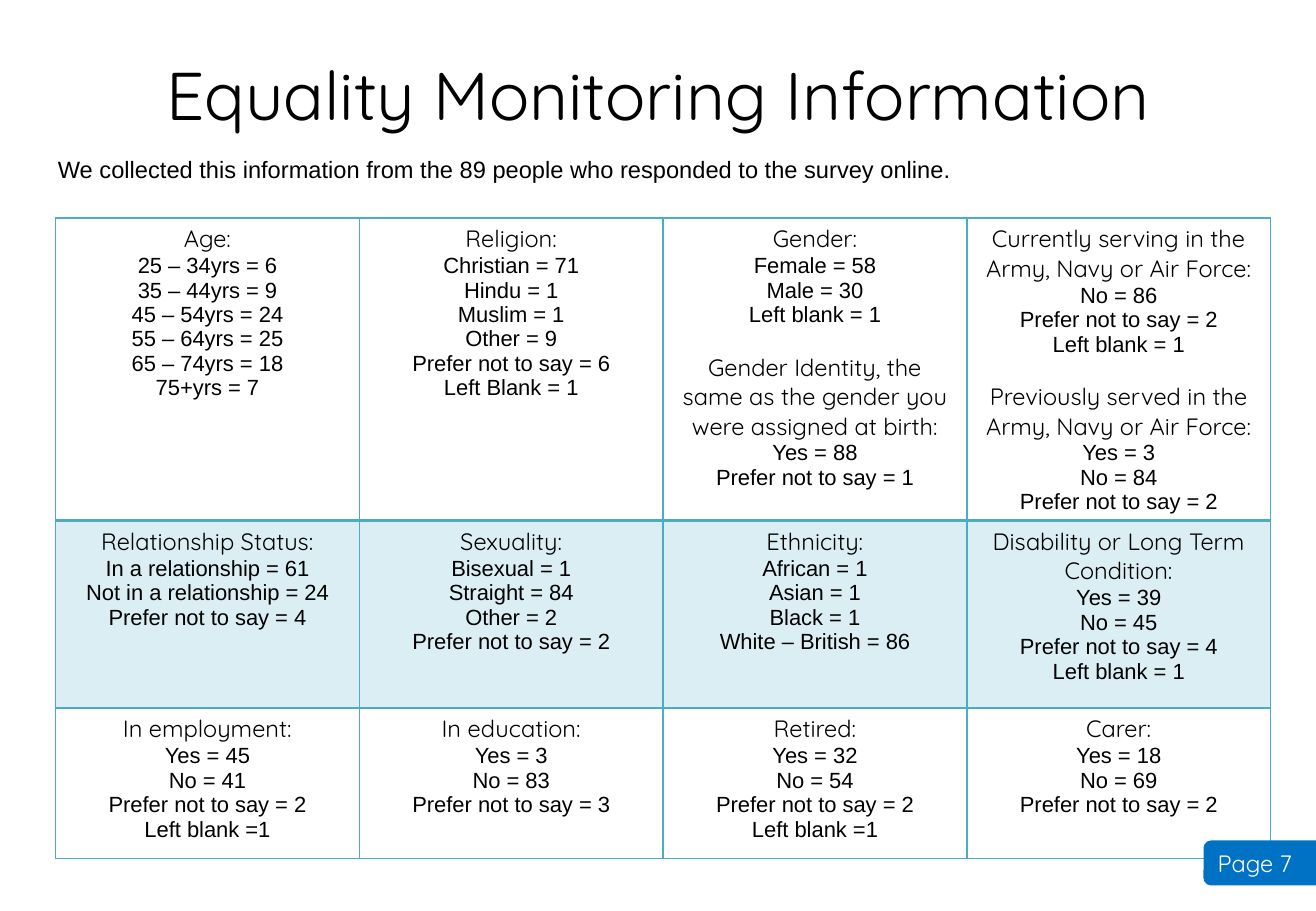
from dataclasses import dataclass

from lxml.etree import SubElement
from pptx import Presentation
from pptx.dml.color import RGBColor
from pptx.enum.shapes import MSO_SHAPE
from pptx.enum.text import MSO_ANCHOR, MSO_AUTO_SIZE, PP_ALIGN
from pptx.oxml.ns import qn
from pptx.util import Cm, Pt

TEAL = "4BACC6"
PALE_TEAL = "DBEEF4"
BLUE = "0072C6"
WHITE = "FFFFFF"
BLACK = "000000"

HEADING = {"name": "Quicksand", "size": Pt(14)}
ANSWER = {"name": "Arial", "size": Pt(13)}
INTRO = {"name": "Arial", "size": Pt(14)}
TITLE = {"name": "Quicksand", "size": Pt(40)}


@dataclass(frozen=True)
class Question:
    heading: str
    answers: tuple[str, ...]


@dataclass(frozen=True)
class Row:
    height: float
    fill: str
    top: float
    bottom: float
    cells: tuple[tuple[Question, ...], ...]


ROWS = (
    Row(6.31, WHITE, 1, 2, (
        (Question("Age:", (
            "25 – 34yrs = 6", "35 – 44yrs = 9", "45 – 54yrs = 24",
            "55 – 64yrs = 25", "65 – 74yrs = 18", "75+yrs = 7")),),
        (Question("Religion:", (
            "Christian = 71", "Hindu = 1", "Muslim = 1", "Other = 9",
            "Prefer not to say = 6", "Left Blank = 1")),),
        (Question("Gender:", ("Female = 58", "Male = 30", "Left blank = 1")),
         Question("Gender Identity, the same as the gender you were assigned at birth:",
                  ("Yes = 88", "Prefer not to say = 1"))),
        (Question("Currently serving in the Army, Navy or Air Force:",
                  ("No = 86", "Prefer not to say = 2", "Left blank = 1")),
         Question("Previously served in the Army, Navy or Air Force:",
                  ("Yes = 3", "No = 84", "Prefer not to say = 2"))),
    )),
    Row(3.92, PALE_TEAL, 2, 1, (
        (Question("Relationship Status:", (
            "In a relationship = 61", "Not in a relationship = 24",
            "Prefer not to say = 4")),),
        (Question("Sexuality:", (
            "Bisexual = 1", "Straight = 84", "Other = 2", "Prefer not to say = 2")),),
        (Question("Ethnicity:", (
            "African = 1", "Asian = 1", "Black = 1", "White – British = 86")),),
        (Question("Disability or Long Term Condition:", (
            "Yes = 39", "No = 45", "Prefer not to say = 4", "Left blank = 1")),),
    )),
    Row(3.15, WHITE, 1, 1, (
        (Question("In employment:", (
            "Yes = 45", "No = 41", "Prefer not to say = 2", "Left blank =1")),),
        (Question("In education:", ("Yes = 3", "No = 83", "Prefer not to say = 3")),),
        (Question("Retired:", (
            "Yes = 32", "No = 54", "Prefer not to say = 2", "Left blank =1")),),
        (Question("Carer:", ("Yes = 18", "No = 69", "Prefer not to say = 2")),),
    )),
)


def rgb(color: str) -> RGBColor:
    return RGBColor.from_string(color)


def write(p, text: str, fmt: dict, color: str = BLACK, align=PP_ALIGN.LEFT) -> None:
    p.alignment = align
    r = p.add_run()
    r.text = text
    for key, value in fmt.items():
        setattr(r.font, key, value)
    r.font.color.rgb = rgb(color)


def set_borders(cell, top: float, bottom: float) -> None:
    tc_pr = cell._tc.get_or_add_tcPr()
    for side, width in (("L", 1), ("R", 1), ("T", top), ("B", bottom)):
        ln = SubElement(tc_pr, qn(f"a:ln{side}"), w=str(Pt(width)))
        SubElement(SubElement(ln, qn("a:solidFill")), qn("a:srgbClr"), val=TEAL)


def fill_cell(cell, row: Row, questions: tuple[Question, ...]) -> None:
    set_borders(cell, row.top, row.bottom)
    cell.fill.solid()
    cell.fill.fore_color.rgb = rgb(row.fill)
    tf = cell.text_frame
    for i, question in enumerate(questions):
        p = tf.add_paragraph() if i else tf.paragraphs[0]
        if i:
            p.space_before = Pt(15)
        write(p, question.heading, HEADING, align=PP_ALIGN.CENTER)
        for answer in question.answers:
            write(tf.add_paragraph(), answer, ANSWER, align=PP_ALIGN.CENTER)


def add_title(s) -> None:
    sp = s.shapes.title
    sp.left, sp.top, sp.width, sp.height = Cm(1.37), Cm(0.36), Cm(24.77), Cm(3.18)
    tf = sp.text_frame
    tf.auto_size = MSO_AUTO_SIZE.NONE
    tf.vertical_anchor = MSO_ANCHOR.MIDDLE
    write(tf.paragraphs[0], "Equality Monitoring Information", TITLE, align=PP_ALIGN.CENTER)


def add_answers(s) -> None:
    height = sum(row.height for row in ROWS)
    table = s.shapes.add_table(
        len(ROWS), len(ROWS[0].cells), Cm(1.16), Cm(4.56), Cm(25.4), Cm(height)).table
    table.first_row = False
    table.horz_banding = False
    for i, row in enumerate(ROWS):
        table.rows[i].height = Cm(row.height)
        for j, questions in enumerate(row.cells):
            fill_cell(table.cell(i, j), row, questions)


def add_page_tab(s) -> None:
    sp = s.shapes.add_shape(
        MSO_SHAPE.ROUNDED_RECTANGLE, Cm(25.16), Cm(6.92 * 2.54), Cm(4.8), Cm(0.94))
    sp.shadow.inherit = False
    sp.fill.solid()
    sp.fill.fore_color.rgb = rgb(BLUE)
    sp.line.fill.background()
    write(sp.text_frame.paragraphs[0], "Page 7", HEADING, WHITE)


def add_intro(s) -> None:
    tf = s.shapes.add_textbox(Cm(0.96), Cm(3.12), Cm(25.6), Cm(0.86)).text_frame
    tf.word_wrap = True
    write(tf.paragraphs[0],
          "We collected this information from the 89 people who responded to the survey online.",
          INTRO)


def main() -> None:
    prs = Presentation()
    prs.slide_width, prs.slide_height = Cm(27.51), Cm(19.05)
    s = prs.slides.add_slide(prs.slide_layouts[5])
    add_title(s)
    add_answers(s)
    add_page_tab(s)
    add_intro(s)
    prs.save("out.pptx")


if __name__ == "__main__":
    main()
